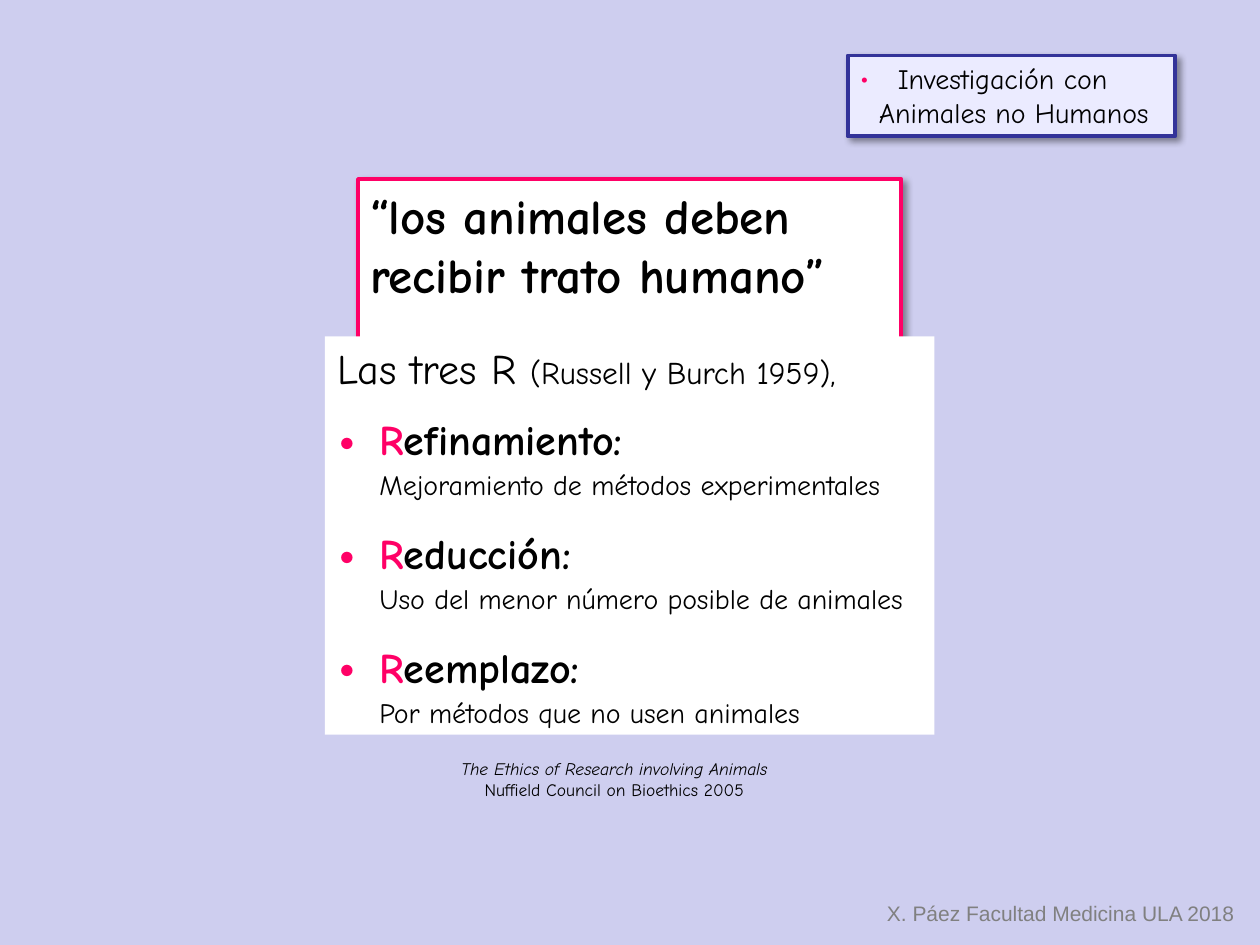
from lxml import etree
from pptx import Presentation
from pptx.dml.color import RGBColor
from pptx.enum import shapes, text
from pptx.oxml import ns
from pptx.util import Cm, Pt

LAVENDER = RGBColor(0xCE, 0xCE, 0xEF)
PALE = RGBColor(0xEB, 0xEB, 0xFF)
NAVY = RGBColor(0x33, 0x33, 0x99)
PINK = RGBColor(0xFF, 0x00, 0x66)
WHITE = RGBColor(0xFF, 0xFF, 0xFF)
BLACK = RGBColor(0x00, 0x00, 0x00)
GRAY = RGBColor(0x80, 0x80, 0x80)
FONT = "Comic Neue"

# Content
TOPIC = ["Investigación con", "Animales no Humanos"]
QUOTE = ["“los animales deben", "recibir trato humano”"]
INTRO = ("Las tres R ", "(Russell y Burch 1959),")
THREE_RS = [
    ("Refinamiento:", "Mejoramiento de métodos experimentales"),
    ("Reducción:", "Uso del menor número posible de animales"),
    ("Reemplazo:", "Por métodos que no usen animales"),
]
SOURCE = ["The Ethics of Research involving Animals",
          "Nuffield Council on Bioethics 2005"]
CREDIT = "X. Páez Facultad Medicina ULA 2018"

# Left, top, width, height in cm
TOPIC_BOX = (17.09, 1.12, 6.6, 1.63)
QUOTE_BOX = (7.22, 3.61, 10.95, 3.42)
RS_BOX = (6.55, 6.78, 12.29, 8.03)
SOURCE_BOX = (9.04, 15.16, 7.32, 1.12)
CREDIT_BOX = (17.63, 18.03, 7.77, 0.76)
RS_INDENT = 0.85


def add_shadow(sp):
    effects = sp._element.spPr.find(ns.qn("a:effectLst"))
    shadow = etree.SubElement(effects, ns.qn("a:outerShdw"), blurRad=str(Pt(4)),
                              dist=str(Pt(3)), dir="2700000", algn="tl", rotWithShape="0")
    color = etree.SubElement(shadow, ns.qn("a:srgbClr"), val="000000")
    etree.SubElement(color, ns.qn("a:alpha"), val="40000")


def add_panel(s, box, fill, line=None):
    sp = s.shapes.add_shape(shapes.MSO_SHAPE.RECTANGLE, *map(Cm, box))
    sp.shadow.inherit = False
    sp.fill.solid()
    sp.fill.fore_color.rgb = fill
    if line is None:
        sp.line.fill.background()
    else:
        sp.line.color.rgb = line
        sp.line.width = Pt(2.25)
        add_shadow(sp)
    return set_frame(sp)


def add_label(s, box):
    return set_frame(s.shapes.add_textbox(*map(Cm, box)))


def set_frame(sp):
    tf = sp.text_frame
    tf.word_wrap = True
    tf.vertical_anchor = text.MSO_ANCHOR.TOP
    return tf


def add_par(tf, indent=0, bullet=None, before=None, align=text.PP_ALIGN.LEFT):
    """Next paragraph; bullet is its size in percent of the text."""
    p = tf.paragraphs[0]
    if p.runs:
        p = tf.add_paragraph()
    p.alignment = align
    pPr = p._p.get_or_add_pPr()
    pPr.set("marL", str(Cm(indent)))
    pPr.set("indent", str(-Cm(indent) if bullet else 0))
    if bullet:
        color = etree.SubElement(pPr, ns.qn("a:buClr"))
        etree.SubElement(color, ns.qn("a:srgbClr"), val=str(PINK))
        etree.SubElement(pPr, ns.qn("a:buSzPct"), val=str(bullet * 1000))
        etree.SubElement(pPr, ns.qn("a:buFont"), typeface=FONT)
        etree.SubElement(pPr, ns.qn("a:buChar"), char="•")
    if before is not None:
        p.space_before = Pt(before)
    return p


def add_run(p, words, size, color=BLACK, bold=False, italic=False, font=FONT):
    r = p.add_run()
    r.text = words
    r.font.name = font
    r.font.size = Pt(size)
    r.font.color.rgb = color
    r.font.bold = bold
    r.font.italic = italic


def main():
    prs = Presentation()
    prs.slide_width, prs.slide_height = Cm(25.4), Cm(19.05)
    s = prs.slides.add_slide(prs.slide_layouts[6])
    s.background.fill.solid()
    s.background.fill.fore_color.rgb = LAVENDER

    # Quotation
    tf = add_panel(s, QUOTE_BOX, WHITE, PINK)
    for line in QUOTE:
        add_run(add_par(tf), line, 28, bold=True)

    # The three Rs
    tf = add_panel(s, RS_BOX, WHITE)
    p = add_par(tf)
    for words, size in zip(INTRO, (24, 18)):
        add_run(p, words, size)
    for i, (name, meaning) in enumerate(THREE_RS):
        p = add_par(tf, RS_INDENT, bullet=150, before=15 if i else 12)
        add_run(p, name[0], 24, PINK, bold=True)
        add_run(p, name[1:], 24, bold=True)
        add_run(add_par(tf, RS_INDENT, before=2), meaning, 16)

    # Source, set left of the box centre
    tf = add_label(s, SOURCE_BOX)
    tf.word_wrap = False
    tf.margin_right = Cm(0.89)
    for line, italic in zip(SOURCE, (True, False)):
        add_run(add_par(tf, align=text.PP_ALIGN.CENTER), line, 10, italic=italic)

    # Credit
    add_run(add_par(add_label(s, CREDIT_BOX)), CREDIT, 12, GRAY, font="Arial")

    # Topic
    tf = add_panel(s, TOPIC_BOX, PALE, NAVY)
    for line, indent, bullet in zip(TOPIC, (0.76, 0.38), (100, None)):
        add_run(add_par(tf, indent, bullet), line, 16)

    prs.save("out.pptx")


if __name__ == "__main__":
    main()
